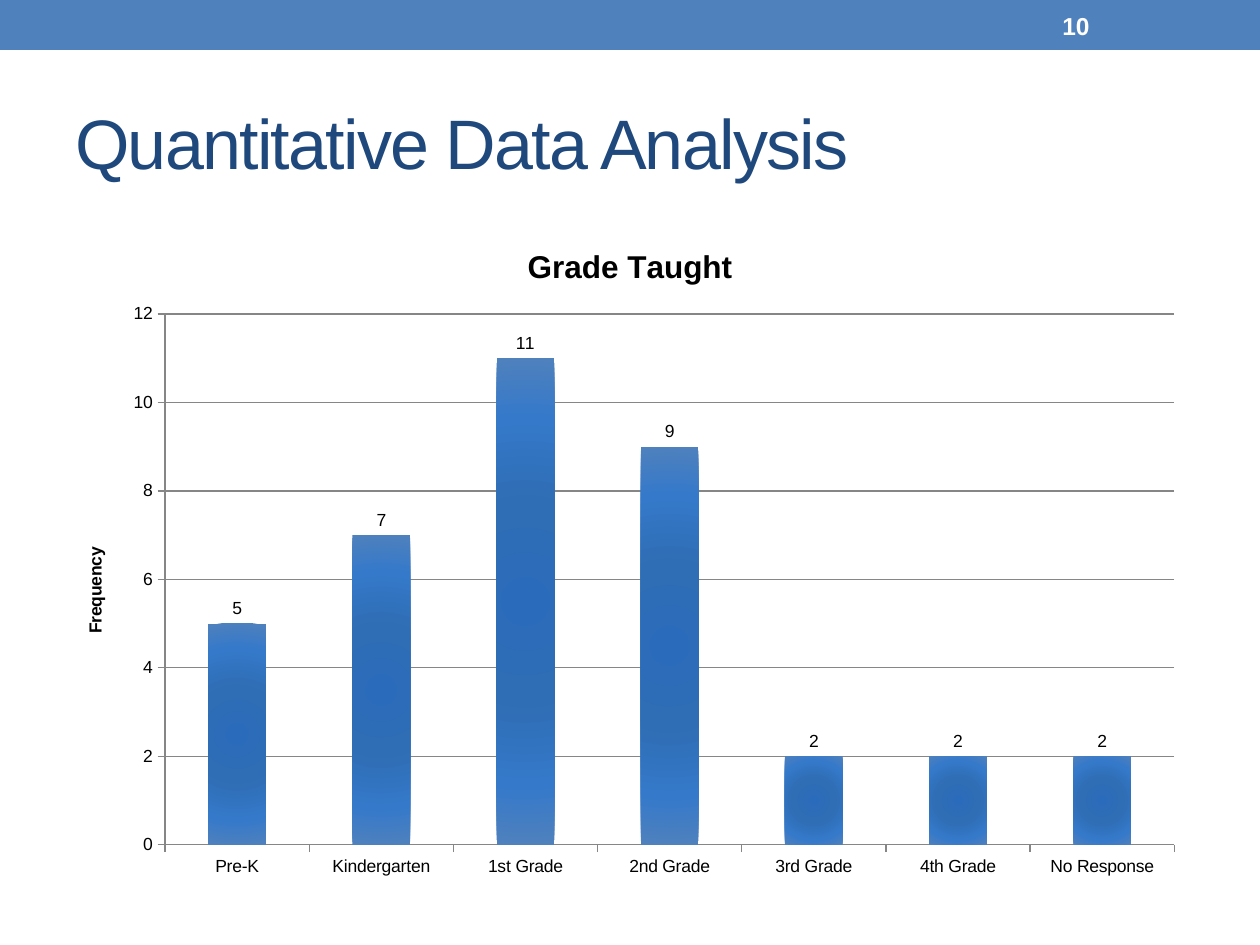
from lxml.etree import fromstring
from pptx import Presentation
from pptx.chart.data import CategoryChartData
from pptx.dml.color import RGBColor
from pptx.enum.chart import XL_CHART_TYPE, XL_LABEL_POSITION, XL_TICK_MARK
from pptx.enum.shapes import MSO_SHAPE
from pptx.enum.text import MSO_ANCHOR
from pptx.oxml.ns import nsdecls, qn
from pptx.util import Pt

PX = 914400 // 126
BLUE = "4F81BD"
GRAY = "868686"
GRADES = {"Pre-K": 5, "Kindergarten": 7, "1st Grade": 11, "2nd Grade": 9,
          "3rd Grade": 2, "4th Grade": 2, "No Response": 2}
BAR_STOPS = [(0, "2A6BBC"), (40, "2F6DB4"), (75, "3579CA"), (100, BLUE)]


def color(value):
    return RGBColor.from_string(value)


def write(frame, text, size, fill="000000", bold=False, spacing=0):
    span = frame.paragraphs[0].add_run()
    span.text = text
    span.font.name = "Arial"
    span.font.size = Pt(size)
    span.font.bold = bold
    span.font.color.rgb = color(fill)
    if spacing:
        span.font._element.set("spc", str(spacing * 100))


deck = Presentation()
deck.slide_width, deck.slide_height = 1260 * PX, 945 * PX
page = deck.slides.add_slide(deck.slide_layouts[6])

# Header band
band = page.shapes.add_shape(MSO_SHAPE.RECTANGLE, 0, 0, 1260 * PX, 50 * PX)
band.shadow.inherit = False
band.fill.solid()
band.fill.fore_color.rgb = color(BLUE)
band.line.fill.background()

# Title and page number
for text, place, style in [
    ("Quantitative Data Analysis", (63, 73, 1134, 136),
     {"size": 40, "fill": "1F497D", "spacing": -1}),
    ("10", (1050, 3, 147, 45), {"size": 14, "fill": "FFFFFF", "bold": True}),
]:
    box = page.shapes.add_textbox(*(length * PX for length in place))
    box.text_frame.word_wrap = True
    box.text_frame.vertical_anchor = MSO_ANCHOR.MIDDLE
    write(box.text_frame, text, **style)

# Chart
data = CategoryChartData()
data.categories = list(GRADES)
data.add_series("Series 1", list(GRADES.values()))
chart = page.shapes.add_chart(XL_CHART_TYPE.COLUMN_CLUSTERED, 63 * PX, 220 * PX,
                              1134 * PX, 672 * PX, data).chart
chart.has_legend = False
chart.font.name = "Arial"
chart.font.size = Pt(10)
chart.font.color.rgb = color("000000")
chart.has_title = True
write(chart.chart_title.text_frame, "Grade Taught", 18, bold=True)
chart.chart_title.include_in_layout = False

# Axes
value_axis, category_axis = chart.value_axis, chart.category_axis
for axis in (value_axis, category_axis):
    axis.major_tick_mark = XL_TICK_MARK.OUTSIDE
    axis.minor_tick_mark = XL_TICK_MARK.NONE
    axis.format.line.color.rgb = color(GRAY)
    axis.format.line.width = Pt(0.75)
value_axis.minimum_scale, value_axis.maximum_scale = 0, 12
value_axis.major_unit = 2
value_axis.has_major_gridlines = True
value_axis.major_gridlines.format.line.color.rgb = color(GRAY)
value_axis.major_gridlines.format.line.width = Pt(0.75)
axis_frame = value_axis.axis_title.text_frame
write(axis_frame, "Frequency", 10, bold=True)
axis_frame._txBody.bodyPr.set("rot", "-5400000")
axis_frame._txBody.bodyPr.set("vert", "horz")

# Bars with a gradient that spreads from the centre
plot = chart.plots[0]
plot.gap_width = 150
plot.vary_by_categories = False
plot.has_data_labels = True
plot.data_labels.show_value = True
plot.data_labels.position = XL_LABEL_POSITION.OUTSIDE_END
bars = plot.series[0]
bars.format.fill.solid()
bars.format.fill.fore_color.rgb = color(BLUE)
stops = "".join(f'<a:gs pos="{position * 1000}"><a:srgbClr val="{value}"/></a:gs>'
                for position, value in BAR_STOPS)
gradient = fromstring(
    f'<a:gradFill {nsdecls("a")} rotWithShape="1"><a:gsLst>{stops}</a:gsLst>'
    '<a:path path="circle"><a:fillToRect l="50000" t="50000" r="50000" b="50000"/>'
    '</a:path></a:gradFill>')
solid = bars._element.find(qn("c:spPr")).find(qn("a:solidFill"))
solid.getparent().replace(solid, gradient)

# Fixed plot area, as shares of the chart
plot_area = chart._chartSpace.chart.plotArea
for layout in plot_area.findall(qn("c:layout")):
    plot_area.remove(layout)
shares = {"x": 0.09, "y": 0.14, "w": 0.89, "h": 0.79}
sizes = "".join(f'<c:{side} val="{share}"/>' for side, share in shares.items())
plot_area.insert(0, fromstring(
    f'<c:layout {nsdecls("c")}><c:manualLayout><c:layoutTarget val="inner"/>'
    f'<c:xMode val="edge"/><c:yMode val="edge"/>{sizes}</c:manualLayout></c:layout>'))

deck.save("out.pptx")
